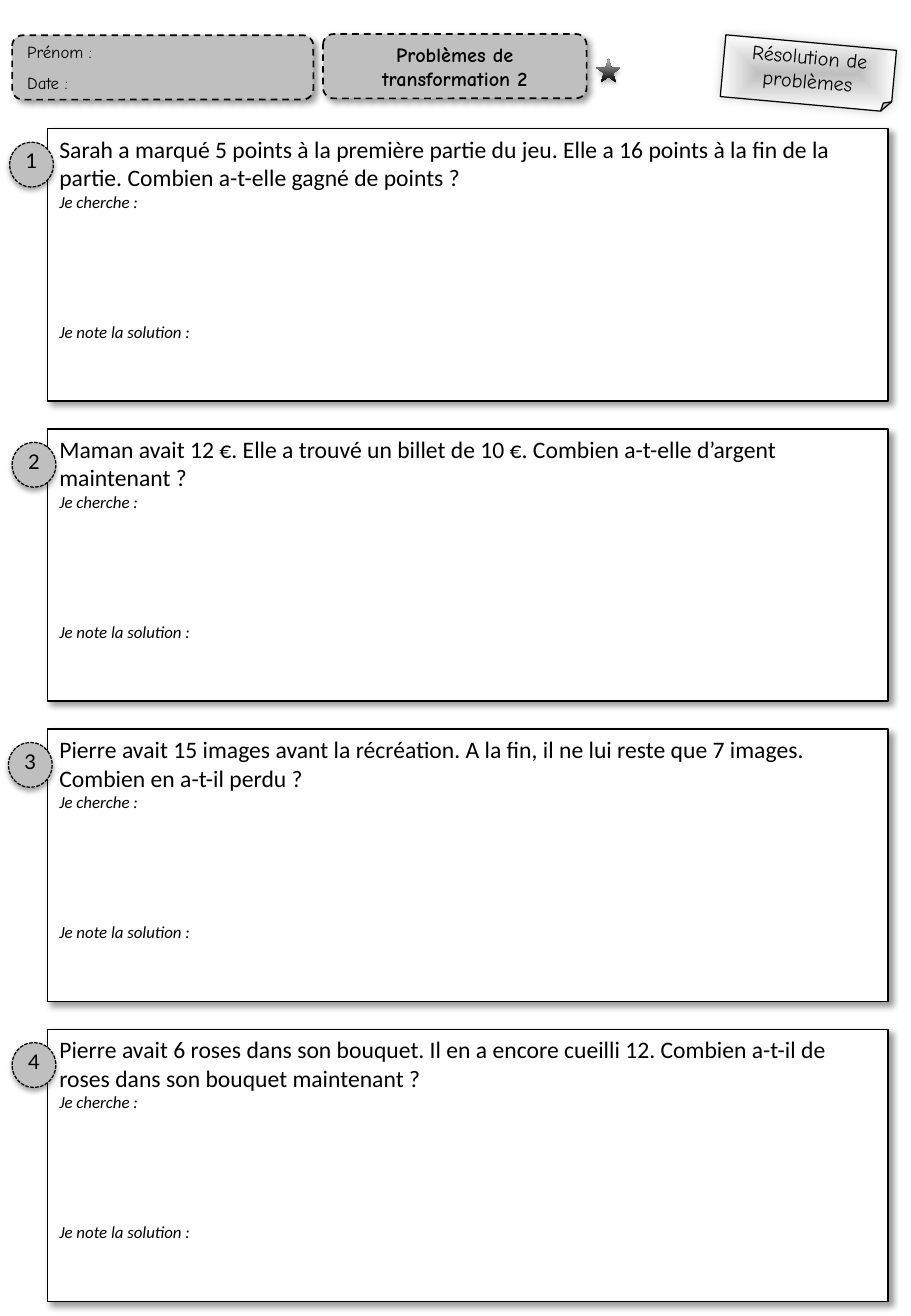
"""Build a maths worksheet with four word problems on a grid of 0.1 inch cells."""
from lxml.etree import SubElement
from pptx import Presentation
from pptx.dml.color import RGBColor
from pptx.enum.dml import MSO_LINE
from pptx.enum.shapes import MSO_SHAPE
from pptx.enum.text import MSO_ANCHOR, MSO_AUTO_SIZE, PP_ALIGN
from pptx.oxml.ns import qn
from pptx.util import Inches, Pt

CELL = Inches(0.1)
COLS, ROWS = 75, 108.3
COLORS = {"ink": "000000", "gray": "BFBFBF", "pale": "BDBDBD", "paper": "FFFFFF"}
HAND = "Comic Neue"
DEEP, SOFT, GLOW = (40, 4, 3, 45), (35, 3.1, 1.8, 90), (20, 6, 0, 315)
TOP, STEP = 10.6, 24.7
TASKS = [
    (0.8, "Sarah a marqué 5 points à la première partie du jeu. Elle a 16 points "
          "à la fin de la partie. Combien a-t-elle gagné de points ?"),
    (1, "Maman avait 12 €. Elle a trouvé un billet de 10 €. "
        "Combien a-t-elle d’argent maintenant ?"),
    (0.7, "Pierre avait 15 images avant la récréation. A la fin, il ne lui reste "
          "que 7 images. Combien en a-t-il perdu ?"),
    (1, "Pierre avait 6 roses dans son bouquet. Il en a encore cueilli 12. "
        "Combien a-t-il de roses dans son bouquet maintenant ?"),
]


def color(name):
    """Return the named colour."""
    return RGBColor.from_string(COLORS[name])


def grid(*cells):
    """Turn grid cells into lengths."""
    return [int(n * CELL) for n in cells]


def shade(shape, glow):
    """Give a shape an outer shadow."""
    alpha, blur, dist, turn = glow
    shape.shadow.inherit = False
    holder = shape.element.spPr.find(qn("a:effectLst"))
    outer = SubElement(holder, qn("a:outerShdw"), blurRad=str(Pt(blur)),
                       dist=str(Pt(dist)), dir=str(turn * 60000),
                       algn="ctr", rotWithShape="0")
    tint = SubElement(outer, qn("a:srgbClr"), val=COLORS["ink"])
    SubElement(tint, qn("a:alpha"), val=str(alpha * 1000))


def blend(shape, *names):
    """Fill a shape with a gradient of two colours."""
    shape.fill.gradient()
    shape.fill.gradient_angle = 90
    for spot, (stop, name) in enumerate(zip(shape.fill.gradient_stops, names)):
        stop.position = spot
        stop.color.rgb = color(name)


def center(shape):
    """Make the gradient of a shape spread from its middle."""
    fill = shape.element.spPr.find(qn("a:gradFill"))
    fill.remove(fill.find(qn("a:lin")))
    way = SubElement(fill, qn("a:path"), path="shape")
    SubElement(way, qn("a:fillToRect"),
               {side: "50000" for side in ("l", "t", "r", "b")})


def draw(slide, kind, area, fill, glow, width=0.75, dash=None):
    """Add a filled and outlined shape with a shadow."""
    shape = slide.shapes.add_shape(kind, *grid(*area))
    shape.fill.solid()
    shape.fill.fore_color.rgb = color(fill)
    shape.line.color.rgb = color("ink")
    shape.line.width = Pt(width)
    if dash:
        shape.line.dash_style = dash
    shade(shape, glow)
    return shape


def write(shape, lines, face, size, align=PP_ALIGN.LEFT, anchor=MSO_ANCHOR.MIDDLE):
    """Fill a shape with paragraphs in one font and return them."""
    frame = shape.text_frame
    frame.word_wrap = True
    frame.vertical_anchor = anchor
    frame.text = "\n".join(lines)
    for para in frame.paragraphs:
        para.alignment = align
        para.font.name = face
        para.font.size = Pt(size)
        para.font.color.rgb = color("ink")
    return frame.paragraphs


def header(slide):
    """Add the name box, the title, the star and the paper note."""
    name, box = (draw(slide, MSO_SHAPE.ROUNDED_RECTANGLE, area, "gray", DEEP, 1,
                      MSO_LINE.DASH)
                 for area in ((1, 2.9, 24.8, 5.3), (26.6, 2.8, 21.7, 5.3)))
    for para in write(name, ["Prénom :", "Date :"], HAND, 10):
        para.space_after = Pt(6)
    name.text_frame.margin_top = name.text_frame.margin_bottom = 0

    title = slide.shapes.title
    title.left, title.top, title.width, title.height = (
        box.left, box.top, box.width, box.height)
    title.text_frame.auto_size = MSO_AUTO_SIZE.NONE
    para, = write(title, ["Problèmes de transformation 2"], HAND, 12, PP_ALIGN.CENTER)
    para.font.bold = True
    box.element.addnext(title.element)

    star = draw(slide, MSO_SHAPE.STAR_5_POINT, (49.1, 4.8, 2, 2), "ink", SOFT)
    star.line.fill.background()
    blend(star, "ink", "pale")

    note = draw(slide, MSO_SHAPE.FOLDED_CORNER, (59.5, 3.5, 14.1, 5.1), "gray", GLOW)
    note.rotation = 5.2
    blend(note, "gray", "paper")
    center(note)
    write(note, ["Résolution de problèmes"], HAND, 12, PP_ALIGN.CENTER)


def problem(slide, rank, left, text):
    """Add a numbered problem with room for the answer."""
    top = TOP + (rank - 1) * STEP
    card = draw(slide, MSO_SHAPE.RECTANGLE, (3.9, top, 69.2, 22.4), "paper", DEEP)
    lines = [text, "Je cherche :", "Je note la solution :"]
    paras = write(card, lines, "Calibri", 14, anchor=MSO_ANCHOR.TOP)
    for para in paras[1:]:
        para.font.size = Pt(10)
        para.font.italic = True
    paras[-1].space_before = Pt(65)

    badge = draw(slide, MSO_SHAPE.OVAL, (left, top + 1.1, 3.6, 3.7), "gray", SOFT,
                 dash=MSO_LINE.SQUARE_DOT)
    write(badge, [str(rank)], "Lato", 12, PP_ALIGN.CENTER, MSO_ANCHOR.TOP)
    frame = badge.text_frame
    frame.margin_left = frame.margin_right = frame.margin_top = frame.margin_bottom = 0


def main():
    """Build and save the worksheet."""
    deck = Presentation()
    deck.slide_width, deck.slide_height = grid(COLS, ROWS)
    slide = deck.slides.add_slide(deck.slide_layouts[5])
    header(slide)
    for rank, (left, text) in enumerate(TASKS, 1):
        problem(slide, rank, left, text)
    deck.save("out.pptx")


if __name__ == "__main__":
    main()
